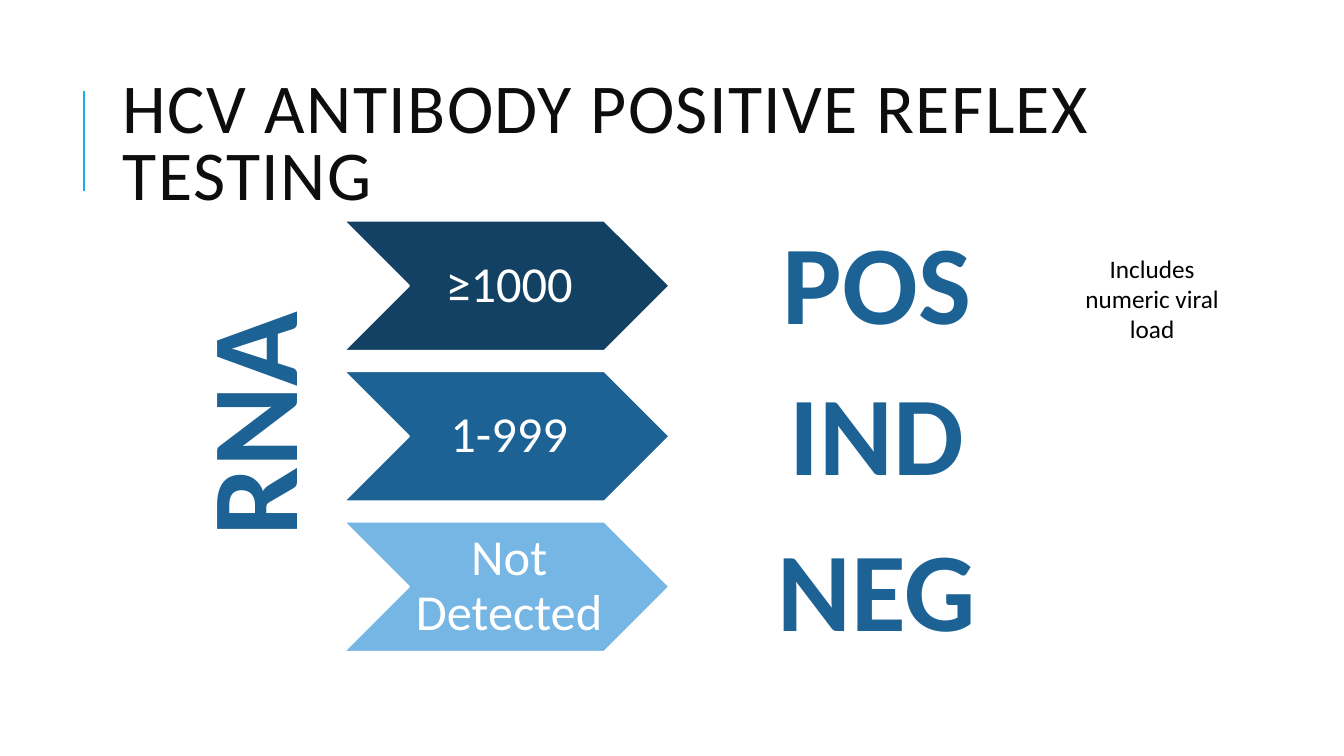
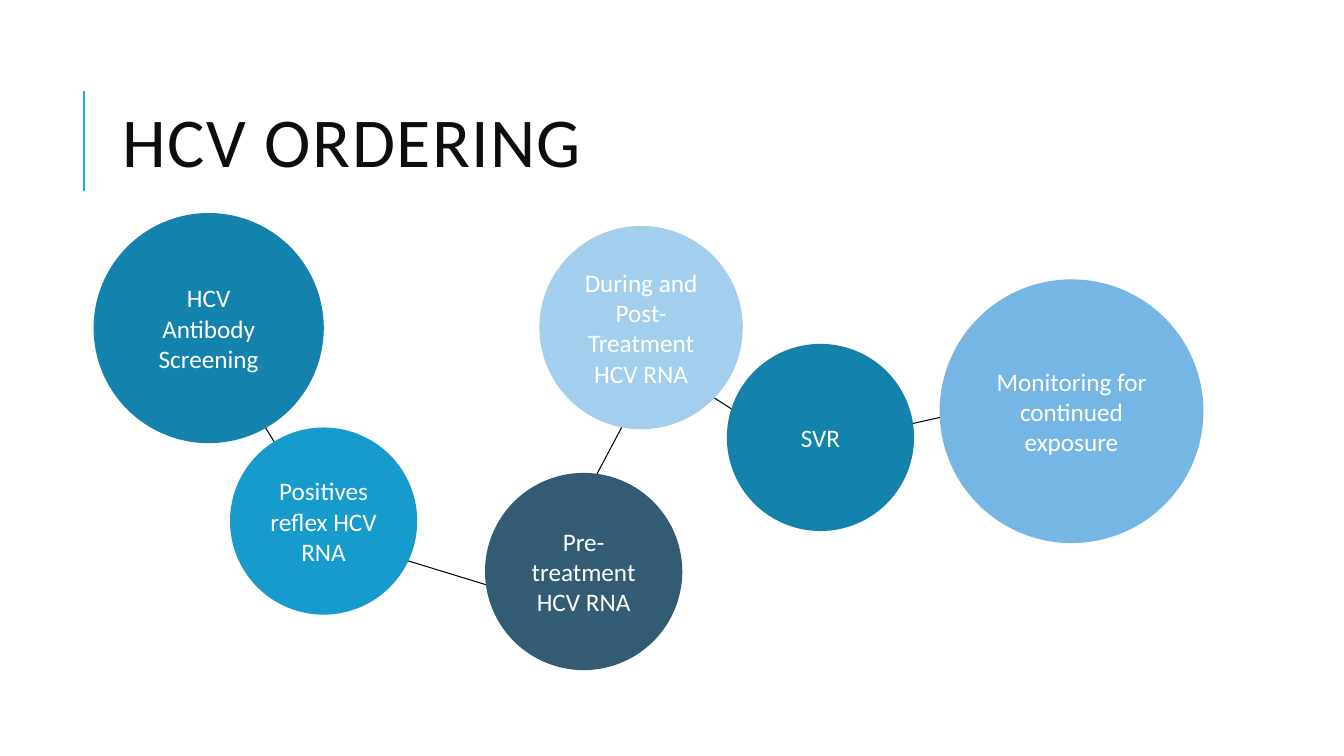
import dataclasses

import pptx
import pptx.dml.color
import pptx.enum.shapes
import pptx.enum.text
import pptx.oxml
import pptx.oxml.ns
import pptx.util

SHAPES = pptx.enum.shapes.MSO_SHAPE
ANCHOR = pptx.enum.text.MSO_ANCHOR
ALIGN = pptx.enum.text.PP_ALIGN
TITLE_ONLY = 5


@dataclasses.dataclass(frozen=True)
class Theme:
    font: str = "Calibri"
    # Colours
    ink: str = "0D0D0D"
    black: str = "000000"
    white: str = "FFFFFF"
    accent: str = "1CADE4"
    navy: str = "134163"
    blue: str = "1D6294"
    sky: str = "75B6E5"
    pale: str = "A3CEED"
    slate: str = "335B74"
    teal: str = "1382AC"
    teal_edge: str = "1580A9"
    cyan: str = "169BCC"
    # Type sizes and line widths in points
    title: int = 50
    label: int = 88
    verdict: int = 80
    range: int = 36
    body: int = 18
    rule: float = 1.5
    outline: float = 1.25
    link: float = 0.75


THEME = Theme()
WIDTH, HEIGHT = pptx.util.Inches(13.33), pptx.util.Inches(7.5)


# Lengths are percentages of the slide's width and height
def across(share):
    return round(WIDTH * share / 100)


def down(share):
    return round(HEIGHT * share / 100)


def frame(left, top, width, height):
    return across(left), down(top), across(width), down(height)


def rgb(colour):
    return pptx.dml.color.RGBColor.from_string(colour)


def format_text(text_frame, size, colour, bold=False, align=ALIGN.CENTER, spacing=None):
    for paragraph in text_frame.paragraphs:
        paragraph.alignment = align
        paragraph.line_spacing = spacing
        for run in paragraph.runs:
            run.font.name = THEME.font
            run.font.size = pptx.util.Pt(size)
            run.font.bold = bold
            run.font.color.rgb = rgb(colour)


def add_line(slide, start, end, colour, width):
    line = slide.shapes.add_connector(
        pptx.enum.shapes.MSO_CONNECTOR.STRAIGHT,
        across(start[0]), down(start[1]), across(end[0]), down(end[1]))
    line.line.color.rgb = rgb(colour)
    line.line.width = pptx.util.Pt(width)
    line._element.spPr.append(pptx.oxml.parse_xml(
        f"<a:effectLst {pptx.oxml.ns.nsdecls('a')}/>"))


def add_label(slide, box, text, size, colour, bold=False, wrap=True):
    label = slide.shapes.add_textbox(*frame(*box))
    label.text_frame.word_wrap = wrap
    label.text_frame.text = text
    format_text(label.text_frame, size, colour, bold)
    return label


def add_filled_shape(slide, preset, box, text, size, fill, edge, spacing=None):
    shape = slide.shapes.add_shape(preset, *box)
    shape.shadow.inherit = False
    shape.fill.solid()
    shape.fill.fore_color.rgb = rgb(fill)
    shape.line.color.rgb = rgb(edge)
    shape.line.width = pptx.util.Pt(THEME.outline)
    shape.text_frame.word_wrap = True
    shape.text_frame.vertical_anchor = ANCHOR.MIDDLE
    shape.text_frame.text = text
    format_text(shape.text_frame, size, THEME.white, spacing=spacing)
    return shape


def add_titled_slide(deck, heading):
    slide = deck.slides.add_slide(deck.slide_layouts[TITLE_ONLY])
    add_line(slide, (6.25, 25.33), (6.25, 12), THEME.accent, THEME.rule)
    title = slide.shapes.title
    title.left, title.top, title.width, title.height = frame(8.4, 8.53, 79.75, 21.87)
    title.text_frame.text = heading
    title.text_frame.word_wrap = True
    title.text_frame.auto_size = pptx.enum.text.MSO_AUTO_SIZE.NONE
    title.text_frame.vertical_anchor = ANCHOR.MIDDLE
    format_text(title.text_frame, THEME.title, THEME.ink, align=ALIGN.LEFT, spacing=0.8)
    # Letter spacing in hundredths of a point
    for run in title.text_frame.paragraphs[0].runs:
        run.font._element.set("spc", "100")
    return slide


def add_range_chevron(slide, row, text, fill):
    box = frame(25.6, 29.2 + 19.9 * row, 24.2, 17.2)
    chevron = add_filled_shape(slide, SHAPES.CHEVRON, box, text,
                               THEME.range, fill, THEME.white, spacing=0.9)
    text_frame = chevron.text_frame
    text_frame.margin_left, text_frame.margin_right = pptx.util.Inches(0.05), 0
    text_frame.margin_top = text_frame.margin_bottom = pptx.util.Inches(0.03)


def add_step_circle(slide, centre, diameter, text, fill, edge=None):
    size = across(diameter)
    box = (across(centre[0]) - size // 2, down(centre[1]) - size // 2, size, size)
    add_filled_shape(slide, SHAPES.OVAL, box, text, THEME.body, fill, edge or fill)


def build_reflex_testing(deck):
    slide = add_titled_slide(deck, "HCV ANTIBODY POSITIVE REFLEX TESTING")

    # Verdict for each range
    verdicts = add_label(slide, (56.7, 27.47, 17.1, 60.13), "POS\nIND\nNEG",
                         THEME.verdict, THEME.blue, bold=True, wrap=False)
    for paragraph, gap in zip(verdicts.text_frame.paragraphs, (0, 12, 15)):
        paragraph.space_before = pptx.util.Pt(gap)

    # Result ranges
    ranges = (("≥1000", THEME.navy), ("1-999", THEME.blue), ("Not Detected", THEME.sky))
    for row, (text, fill) in enumerate(ranges):
        add_range_chevron(slide, row, text, fill)

    # Side label and remark
    rna = add_label(slide, (8.7, 45.6, 19.65, 21.07), "RNA",
                    THEME.label, THEME.blue, bold=True, wrap=False)
    rna.rotation = 270
    add_label(slide, (78.75, 32.8, 13.95, 9.47), "Includes numeric viral load",
              THEME.body, THEME.black)


def build_ordering(deck):
    slide = add_titled_slide(deck, "HCV ORDERING")

    # Links between successive steps, behind the circles
    links = (
        ((19.65, 56.27), (20.85, 59.73)),
        ((29.78, 73.87), (38.1, 78.4)),
        ((43.35, 66.27), (47.25, 53.2)),
        ((52.13, 51.47), (56.33, 56.27)),
        ((67.28, 56.27), (72, 54.4)),
    )
    for start, end in links:
        add_line(slide, start, end, THEME.black, THEME.link)

    # Steps: centre, diameter, text, fill and optional edge
    steps = (
        ((15.53, 43.4), 17, "HCV Antibody Screening", THEME.teal),
        ((24.08, 68.93), 13.8, "Positives reflex HCV RNA", THEME.cyan),
        ((43.43, 75.6), 14.55, "Pre-treatment HCV RNA", THEME.slate),
        ((47.7, 43.33), 15, "During and Post-Treatment HCV RNA", THEME.pale),
        ((61.05, 57.87), 13.8, "SVR", THEME.teal, THEME.teal_edge),
        ((79.73, 54.4), 19.5, "Monitoring for continued exposure", THEME.sky),
    )
    for step in steps:
        add_step_circle(slide, *step)


def main():
    deck = pptx.Presentation()
    deck.slide_width, deck.slide_height = WIDTH, HEIGHT
    build_reflex_testing(deck)
    build_ordering(deck)
    deck.save("out.pptx")


if __name__ == "__main__":
    main()
